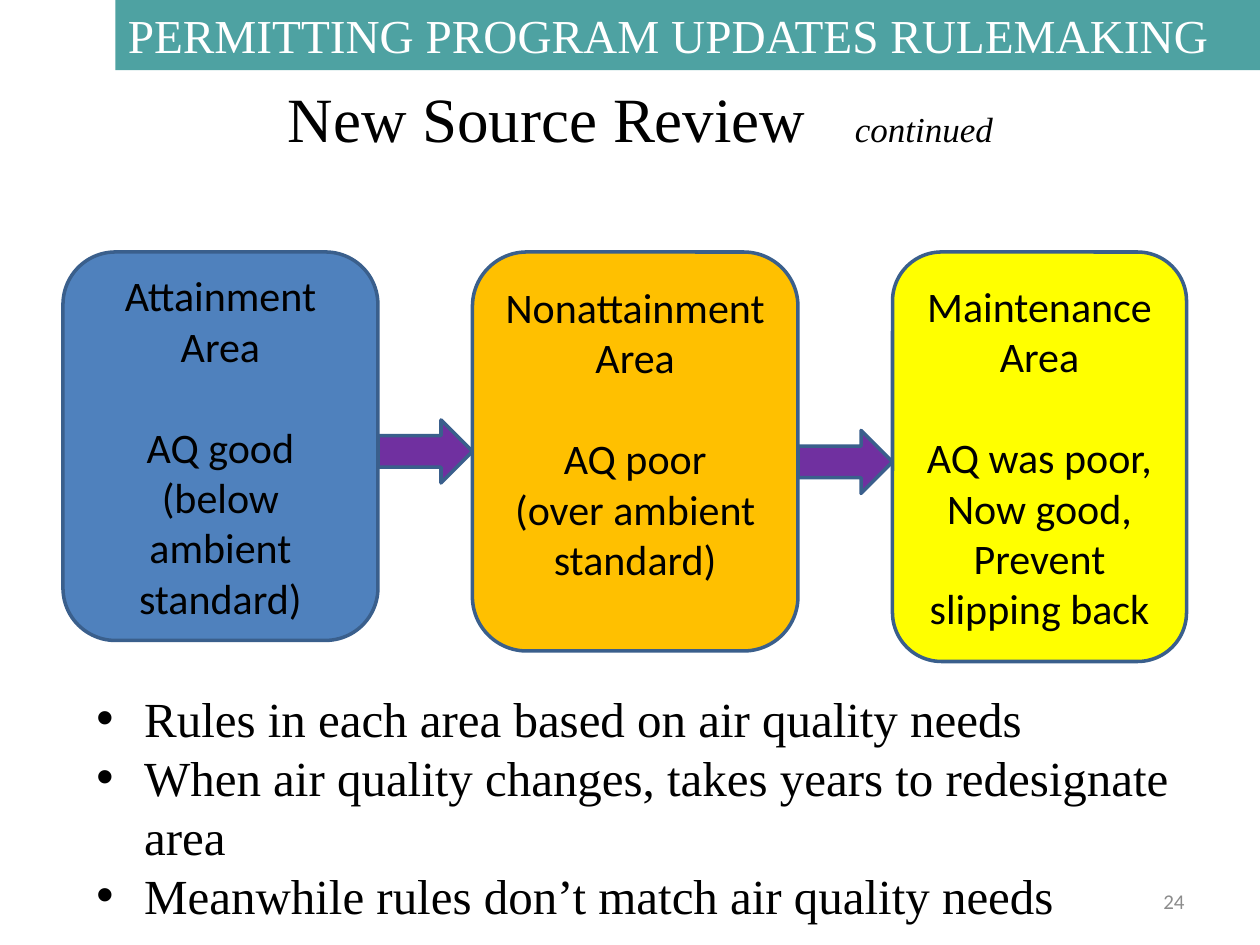
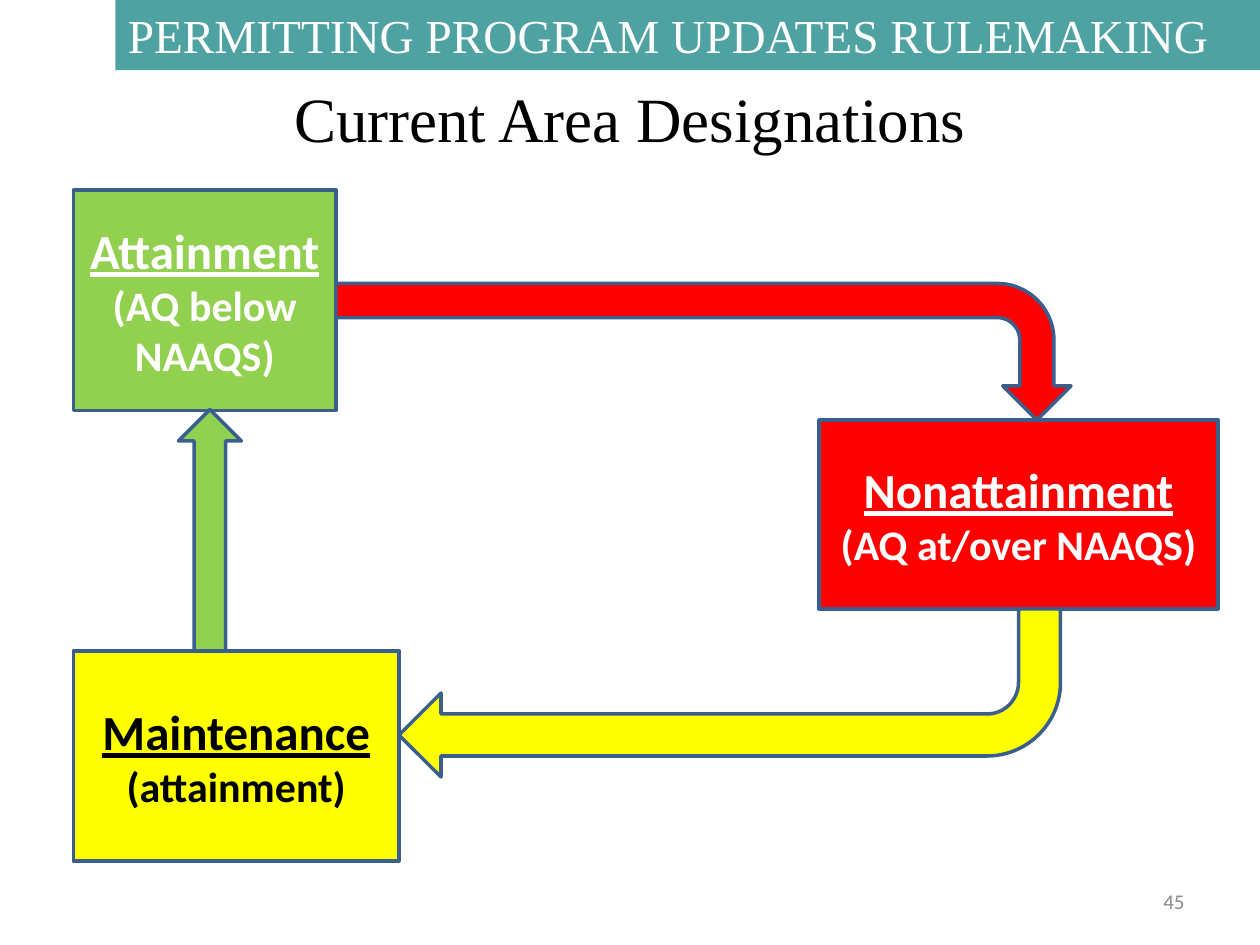
from lxml import etree
from pptx import Presentation
from pptx.dml.color import RGBColor
from pptx.enum.shapes import MSO_SHAPE
from pptx.enum.text import MSO_ANCHOR, PP_ALIGN
from pptx.oxml.ns import qn
from pptx.util import Inches, Pt

CENTER, RIGHT, LEFT = PP_ALIGN.CENTER, PP_ALIGN.RIGHT, PP_ALIGN.LEFT
TOP, MIDDLE = MSO_ANCHOR.TOP, MSO_ANCHOR.MIDDLE
RECTANGLE, ROUNDED = MSO_SHAPE.RECTANGLE, MSO_SHAPE.ROUNDED_RECTANGLE
RIGHT_ARROW, UP_ARROW = MSO_SHAPE.RIGHT_ARROW, MSO_SHAPE.UP_ARROW
BENT_ARROW = MSO_SHAPE.BENT_ARROW

SERIF, SANS = "Times New Roman", "Calibri"
BLACK, WHITE, GRAY = "000000", "FFFFFF", "8C8C8C"
TEAL, OUTLINE, PURPLE = "4EA2A2", "3A5F8C", "7030A0"
BLUE, ORANGE, YELLOW = "4F81BD", "FFC000", "FFFF00"
GREEN, RED = "92D050", "FF0000"

deck = Presentation()
deck.slide_width, deck.slide_height = Inches(10), Inches(7.5)
CELL = deck.slide_width / 120  # the slide is a grid of 120 columns by 90 rows


def add_box(page, area, kind=None, fill=None, line=OUTLINE):
    """Add a preset shape, or a text box when no kind is given; area is in cells."""
    left, top, width, height = (round(cells * CELL) for cells in area)
    if kind is None:
        box = page.shapes.add_textbox(left, top, width, height)
    else:
        box = page.shapes.add_shape(kind, left, top, width, height)
        box.shadow.inherit = False
        box.fill.solid()
        box.fill.fore_color.rgb = RGBColor.from_string(fill)
        if line:
            box.line.color.rgb = RGBColor.from_string(line)
            box.line.width = Pt(2)
        else:
            box.line.fill.background()
    return box


def write(box, lines, font, size, color, align=LEFT, anchor=TOP):
    """Write one paragraph per line in a single style."""
    frame = box.text_frame
    frame.word_wrap = True
    frame.vertical_anchor = anchor
    frame.text = "\n".join(lines)
    for para in frame.paragraphs:
        para.alignment = align
        for span in para.runs:
            span.font.name, span.font.size = font, Pt(size)
            span.font.color.rgb = RGBColor.from_string(color)
    return frame.paragraphs


# Shared parts: band, title, page number
pages = []
for title, title_area, number in [
    ("New Source Review\t", (7, 7, 108, 10.4), "24"),
    ("Current Area Designations", (6, 7, 108, 9), "45"),
]:
    page = deck.slides.add_slide(deck.slide_layouts[6])
    band = add_box(page, (11, 0, 109, 6.7), RECTANGLE, TEAL, line=None)
    write(band, ["PERMITTING PROGRAM UPDATES RULEMAKING"], SERIF, 27, WHITE)
    title_para = write(add_box(page, title_area), [title], SERIF, 36, BLACK, CENTER)[0]
    write(add_box(page, (86, 83.4, 28, 4.8)), [number], SANS, 12, GRAY, RIGHT, MIDDLE)
    pages.append((page, title_para))

# Slide 1: title suffix
review, title_para = pages[0]
suffix = title_para.add_run()
suffix.text = "continued"
suffix.font.name, suffix.font.size, suffix.font.italic = SERIF, Pt(20), True
suffix.font.color.rgb = RGBColor.from_string(BLACK)

# Slide 1: three areas, all starting on row 24
areas = [
    (6, 30, 37, BLUE, ["Attainment Area", "AQ good", "(below ambient standard)"]),
    (45, 31, 38, ORANGE, ["Nonattainment Area", "AQ poor", "(over ambient standard)"]),
    (85, 28, 39, YELLOW, ["Maintenance Area", "AQ was poor,", "Now good,",
                          "Prevent slipping back"]),
]
for left, width, height, fill, lines in areas:
    box = add_box(review, (left, 24, width, height), ROUNDED, fill)
    paras = write(box, lines, SANS, 24, BLACK, CENTER, MIDDLE)
    paras[1].space_before = Pt(29)
    if fill == ORANGE:
        box.text_frame.margin_bottom = Inches(0.35)

# Slide 1: arrows fill the gaps between areas
for step, (area, following) in enumerate(zip(areas, areas[1:])):
    start = area[0] + area[1]
    add_box(review, (start, 40 + step, following[0] - start, 6), RIGHT_ARROW, PURPLE)

# Slide 1: bullets
bullets = add_box(review, (8, 65, 109, 23))
for para in write(bullets, [
    "Rules in each area based on air quality needs",
    "When air quality changes, takes years to redesignate area",
    "Meanwhile rules don’t match air quality needs",
], SERIF, 28, BLACK):
    properties = para._p.get_or_add_pPr()
    properties.set("marL", str(Inches(0.38)))
    properties.set("indent", str(-Inches(0.38)))
    etree.SubElement(properties, qn("a:buFont")).set("typeface", "Arial")
    etree.SubElement(properties, qn("a:buChar")).set("char", "•")

# Slide 2: designations
cycle = pages[1][0]
for area, fill, color, lines in [
    ((7, 18.1, 25, 21), GREEN, WHITE, ["Attainment", "(AQ below NAAQS)"]),
    ((78, 40, 38, 18), RED, WHITE, ["Nonattainment", "(AQ at/over NAAQS)"]),
    ((7, 62, 31, 20), YELLOW, BLACK, ["Maintenance", "(attainment)"]),
]:
    box = add_box(cycle, area, RECTANGLE, fill)
    paras = write(box, lines, SANS, 24, color, CENTER, MIDDLE)
    for para in paras:
        para.runs[0].font.bold = True
    heading = paras[0].runs[0].font
    heading.size, heading.underline = Pt(28), True

# Slide 2: arrows of the cycle
for area, kind, fill, rotation, bend in [
    ((60.5, -1.5, 13, 70), BENT_ARROW, RED, 90, 0.415),
    ((38, 58, 63, 16), BENT_ARROW, YELLOW, 180, 0.4375),
    ((17, 39, 6, 23), UP_ARROW, GREEN, 0, None),
]:
    arrow = add_box(cycle, area, kind, fill)
    arrow.rotation = rotation
    if bend:
        arrow.adjustments[3] = bend

deck.save("out.pptx")
